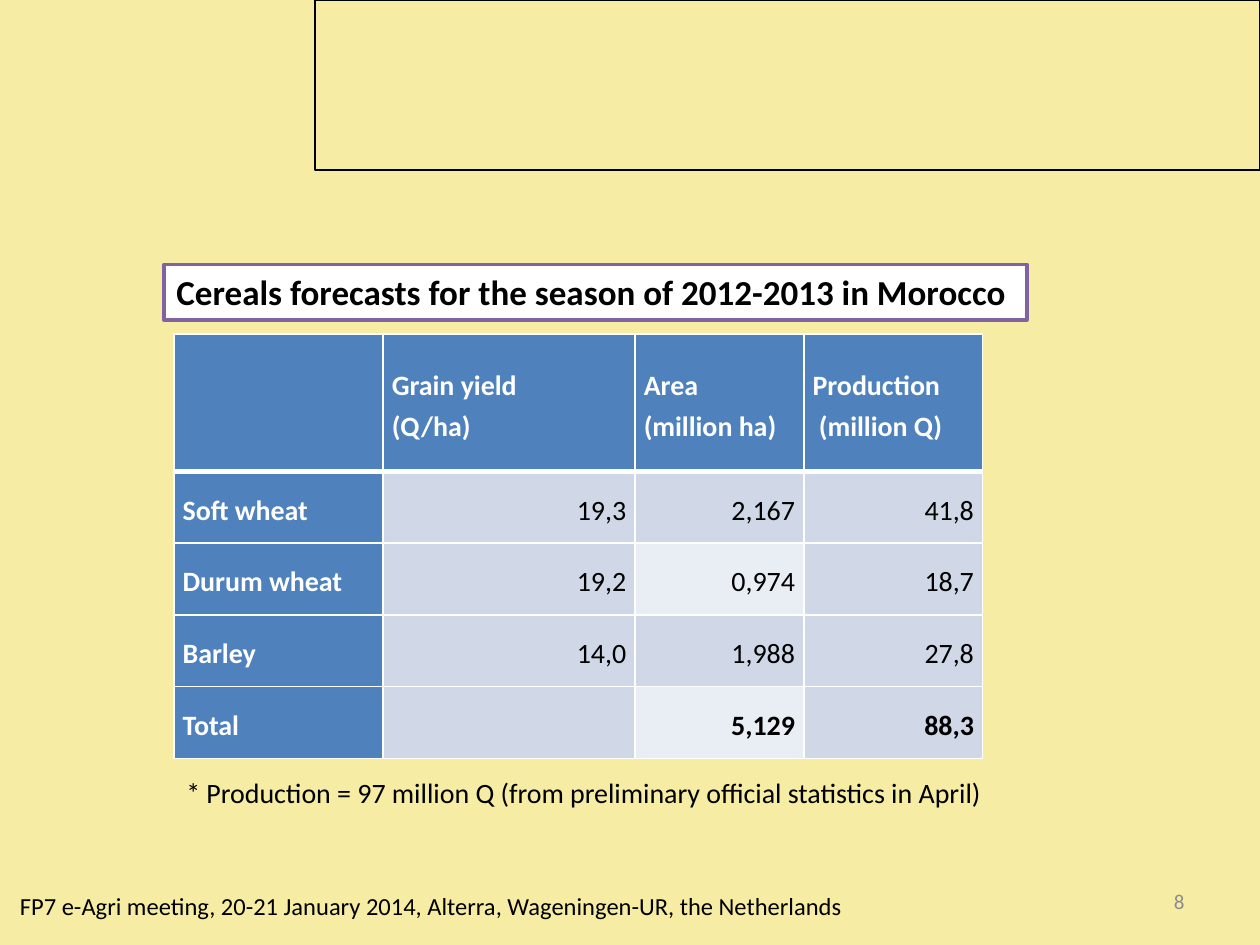
import pptx
import pptx.util
import pptx.dml.color
import pptx.enum.shapes
import pptx.enum.text
import pptx.oxml

Inches, Pt = pptx.util.Inches, pptx.util.Pt
ALIGN = pptx.enum.text.PP_ALIGN
ANCHOR = pptx.enum.text.MSO_ANCHOR
NS = "http://schemas.openxmlformats.org/drawingml/2006/main"

BLUE, PALE, LIGHT = "4F81BD", "D0D8E8", "E9EDF4"
HEADS = ["", "Grain yield\n(Q/ha)", "Area\n(million ha)", "Production\n (million Q)"]
ROWS = [
    ["Soft wheat", "19,3", "2,167", "41,8"],
    ["Durum wheat", "19,2", "0,974", "18,7"],
    ["Barley", "14,0", "1,988", "27,8"],
    ["Total", "", "5,129", "88,3"],
]
WIDTHS = [1.66, 2, 1.34, 1.42]
HEIGHTS = [1.09] + [0.57] * 4


def color(code):
    return pptx.dml.color.RGBColor.from_string(code)


def paint(part, code):
    part.fill.solid()
    part.fill.fore_color.rgb = color(code)


def style(para, size, code="000000", bold=False, align=ALIGN.LEFT):
    para.alignment = align
    font = para.font
    font.name, font.size, font.bold = "Calibri", Pt(size), bold
    font.color.rgb = color(code)


def add_label(slide, box, text, size, code="000000", align=ALIGN.LEFT,
              anchor=ANCHOR.TOP, wrap=True):
    frame = slide.shapes.add_textbox(*map(Inches, box)).text_frame
    frame.word_wrap = wrap
    frame.vertical_anchor = anchor
    frame.text = text
    style(frame.paragraphs[0], size, code, align=align)


def add_banner(slide, box):
    rect = slide.shapes.add_shape(
        pptx.enum.shapes.MSO_SHAPE.RECTANGLE, *map(Inches, box))
    rect.shadow.inherit = False
    rect.fill.background()
    rect.line.color.rgb = color("000000")
    rect.line.width = Pt(1)


def add_title(slide, box, text):
    title = slide.shapes.title
    title.left, title.top, title.width, title.height = map(Inches, box)
    paint(title, "FFFFFF")
    title.line.color.rgb = color("8064A2")
    title.line.width = Pt(2)
    frame = title.text_frame
    frame.text = text
    frame.word_wrap = True
    frame.auto_size = pptx.enum.text.MSO_AUTO_SIZE.NONE
    frame.vertical_anchor = ANCHOR.TOP
    style(frame.paragraphs[0], 20, bold=True, align=ALIGN.JUSTIFY)


def add_borders(cell, bottom):
    # Borders must come before the fill in the cell properties
    props = cell._tc.get_or_add_tcPr()
    for spot, (side, width) in enumerate(
            [("L", 1), ("R", 1), ("T", 1), ("B", bottom)]):
        props.insert(spot, pptx.oxml.parse_xml(
            f'<a:ln{side} xmlns:a="{NS}" w="{Pt(width)}"><a:solidFill>'
            f'<a:srgbClr val="FFFFFF"/></a:solidFill></a:ln{side}>'))


def fill_cell(cell, text, row, col):
    head = row == 0 or col == 0
    band = LIGHT if col == 2 and row % 2 == 0 else PALE
    paint(cell, BLUE if head else band)
    # The header row has a thick rule below it
    add_borders(cell, 3 if row == 0 else 1)
    cell.margin_left = cell.margin_right = Inches(0.07)
    cell.margin_top = cell.margin_bottom = 0
    cell.vertical_anchor = ANCHOR.MIDDLE
    cell.text = text
    for para in cell.text_frame.paragraphs:
        style(para, 16, "FFFFFF" if head else "000000",
              head or row == len(ROWS), ALIGN.LEFT if head else ALIGN.RIGHT)
        para.line_spacing = 1.2


def add_grid(slide, box):
    table = slide.shapes.add_table(
        len(HEIGHTS), len(WIDTHS), *map(Inches, box)).table
    for col, width in zip(table.columns, WIDTHS):
        col.width = Inches(width)
    for row, height in zip(table.rows, HEIGHTS):
        row.height = Inches(height)
    for i, texts in enumerate([HEADS] + ROWS):
        for j, text in enumerate(texts):
            fill_cell(table.cell(i, j), text, i, j)


def main():
    deck = pptx.Presentation()
    deck.slide_width, deck.slide_height = Inches(10), Inches(7.5)
    slide = deck.slides.add_slide(deck.slide_layouts[5])
    paint(slide.background, "F6ECA4")

    # Header frame and footer
    add_banner(slide, (2.5, 0, 7.5, 1.35))
    add_label(slide, (0.06, 7.02, 7.38, 0.34),
              "FP7 e-Agri meeting, 20-21 January 2014, Alterra, "
              "Wageningen-UR, the Netherlands", 14)
    add_label(slide, (7.17, 6.95, 2.33, 0.4), "8", 12, "8C8C8C",
              ALIGN.RIGHT, ANCHOR.MIDDLE)

    # Title, forecast table and footnote
    add_title(slide, (1.3, 2.1, 6.85, 0.44),
              "Cereals forecasts for the season of 2012-2013 in Morocco")
    add_grid(slide, (1.38, 2.65, sum(WIDTHS), sum(HEIGHTS)))
    add_label(slide, (1.38, 6.11, 6.59, 0.37),
              "* Production = 97 million Q "
              "(from preliminary official statistics in April)", 16, wrap=False)

    deck.save("out.pptx")


if __name__ == "__main__":
    main()
